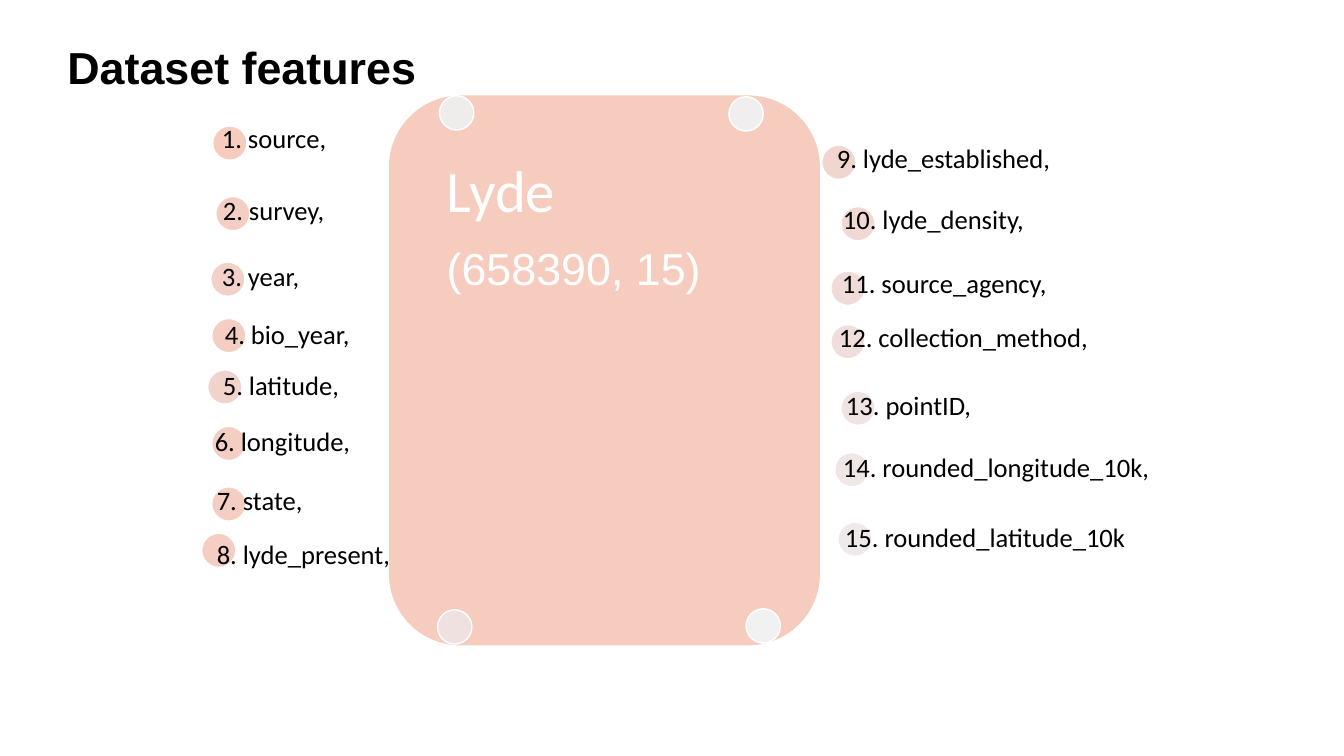
from pptx import Presentation
from pptx.dml.color import RGBColor
from pptx.enum.shapes import MSO_SHAPE as SHAPE
from pptx.enum.text import MSO_ANCHOR as ANCHOR
from pptx.util import Inches, Pt

DOT_SIZE = 0.34
LABEL_SIZE = (3.22, 0.34)

# label, label position, dot position, dot colour
FEATURES = [
    ("source,", (2.15, 1.22), (2.11, 1.25), "F6CCBE"),
    ("survey,", (2.16, 1.93), (2.14, 1.95), "F5CEC3"),
    ("year,", (2.15, 2.59), (2.09, 2.6), "F3D1C8"),
    ("bio_year,", (2.18, 3.16), (2.1, 3.16), "F5CEC3"),
    ("latitude,", (2.16, 3.67), (2.06, 3.67), "F2D3CC"),
    ("longitude,", (2.08, 4.22), (2.1, 4.23), "F5CEC3"),
    ("state,", (2.1, 4.81), (2.1, 4.83), "F5CEC3"),
    ("lyde_present,", (2.1, 5.34), (2, 5.29), "F5CEC3"),
    ("lyde_established,", (8.25, 1.42), (8.15, 1.44), "F1D6D0"),
    ("lyde_density,", (8.31, 2.02), (8.34, 2.05), "F0D9D4"),
    ("source_agency,", (8.3, 2.66), (8.24, 2.69), "F0DBD8"),
    ("collection_method,", (8.27, 3.19), (8.24, 3.22), "EFDEDC"),
    ("pointID,", (8.34, 3.87), (8.34, 3.88), "EFE4E3"),
    ("rounded_longitude_10k,", (8.31, 4.48), (8.28, 4.49), "EFE6E6"),
    ("rounded_latitude_10k", (8.33, 5.18), (8.31, 5.18), "EFE9E9"),
]

CORNER_DOTS = [
    ((4.34, 6.05), "EFE1DF"),
    ((4.36, 0.95), "EFECEC"),
    ((7.23, 0.96), "F0EEEE"),
    ((7.4, 6.04), "F1F1F1"),
]


def color(value):
    return RGBColor.from_string(value)


class FeatureSlide:
    line_color = "FFFFFF"
    text_color = "000000"

    def __init__(self, prs):
        self.shapes = prs.slides.add_slide(prs.slide_layouts[6]).shapes

    def shape(self, kind, pos, size, fill):
        sp = self.shapes.add_shape(kind, *map(Inches, pos + size))
        sp.shadow.inherit = False
        sp.fill.solid()
        sp.fill.fore_color.rgb = color(fill)
        sp.line.color.rgb = color(self.line_color)
        sp.line.width = Pt(1)

    def dot(self, pos, fill):
        self.shape(SHAPE.OVAL, pos, (DOT_SIZE, DOT_SIZE), fill)

    def text(self, pos, size, lines, fill=text_color, inset=(0.1, 0.05),
             anchor=ANCHOR.TOP, **paragraph_format):
        """Add a text box; each line is (text, font name, size, bold)."""
        tf = self.shapes.add_textbox(*map(Inches, pos + size)).text_frame
        side, edge = map(Inches, inset)
        frame_format = {
            "word_wrap": True, "vertical_anchor": anchor,
            "margin_left": side, "margin_right": side,
            "margin_top": edge, "margin_bottom": edge,
        }
        for name, value in frame_format.items():
            setattr(tf, name, value)
        for i, (content, font, points, bold) in enumerate(lines):
            p = tf.add_paragraph() if i else tf.paragraphs[0]
            for name, value in paragraph_format.items():
                setattr(p, name, value)
            r = p.add_run()
            r.text = content
            font_format = {"name": font, "size": Pt(points), "bold": bold}
            for name, value in font_format.items():
                setattr(r.font, name, value)
            r.font.color.rgb = color(fill)

    def label(self, pos, content):
        self.text(pos, LABEL_SIZE, [(content, "Calibri", 19, False)],
                  inset=(0.05, 0.03), anchor=ANCHOR.MIDDLE, line_spacing=0.9)


def main():
    prs = Presentation()
    prs.slide_width, prs.slide_height = Inches(13.33), Inches(7.5)
    s = FeatureSlide(prs)

    s.shape(SHAPE.ROUNDED_RECTANGLE, (3.85, 0.94), (4.29, 5.47), "F6CCBE")
    s.text((4.31, 1.48), (4.09, 1.54),
           [("Lyde", "Calibri", 42, False), ("(658390, 15)", "Arial", 32, False)],
           fill="FFFFFF", inset=(0.12, 0.12), line_spacing=0.9, space_after=Pt(16))

    for number, (name, label_pos, dot_pos, fill) in enumerate(FEATURES, 1):
        s.dot(dot_pos, fill)
        s.label(label_pos, f"{number}. {name}")
    for pos, fill in CORNER_DOTS:
        s.dot(pos, fill)

    s.text((0.57, 0.34), (7.66, 0.64), [("Dataset features", "Arial", 32, True)])
    prs.save("out.pptx")


if __name__ == "__main__":
    main()
